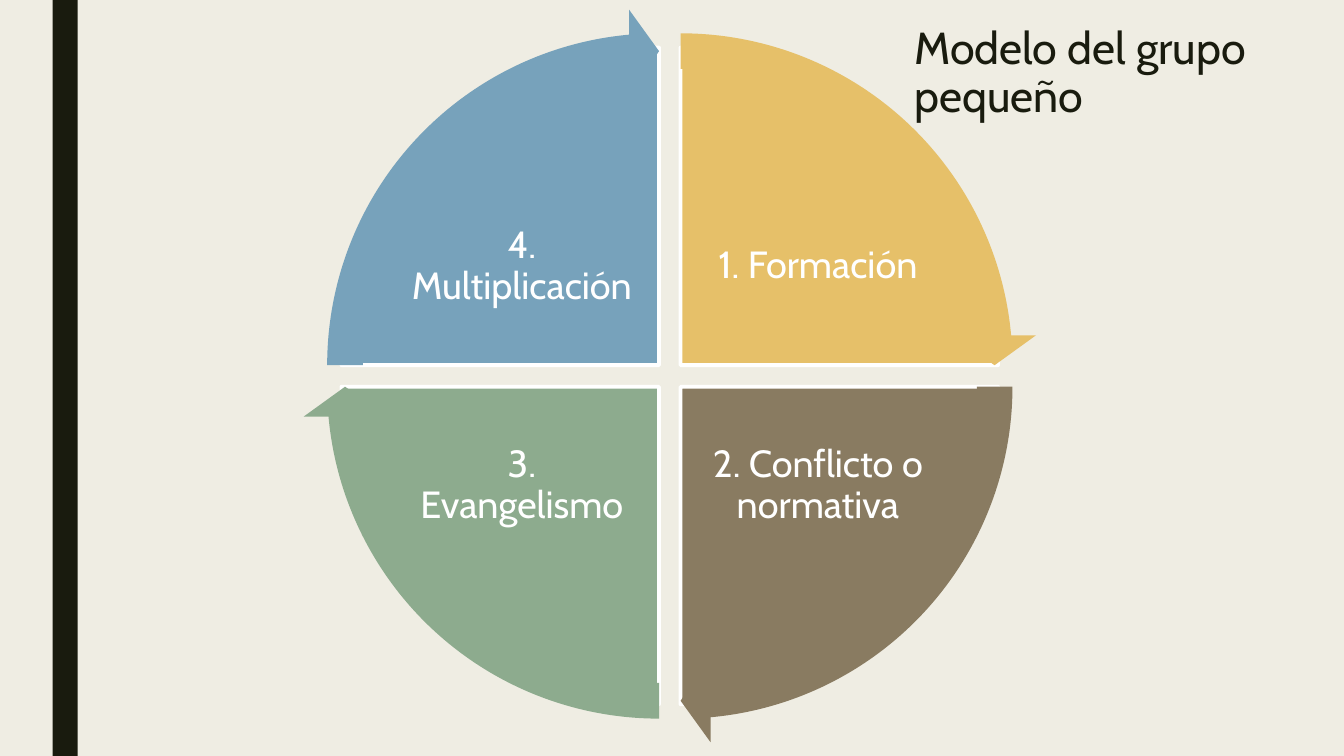
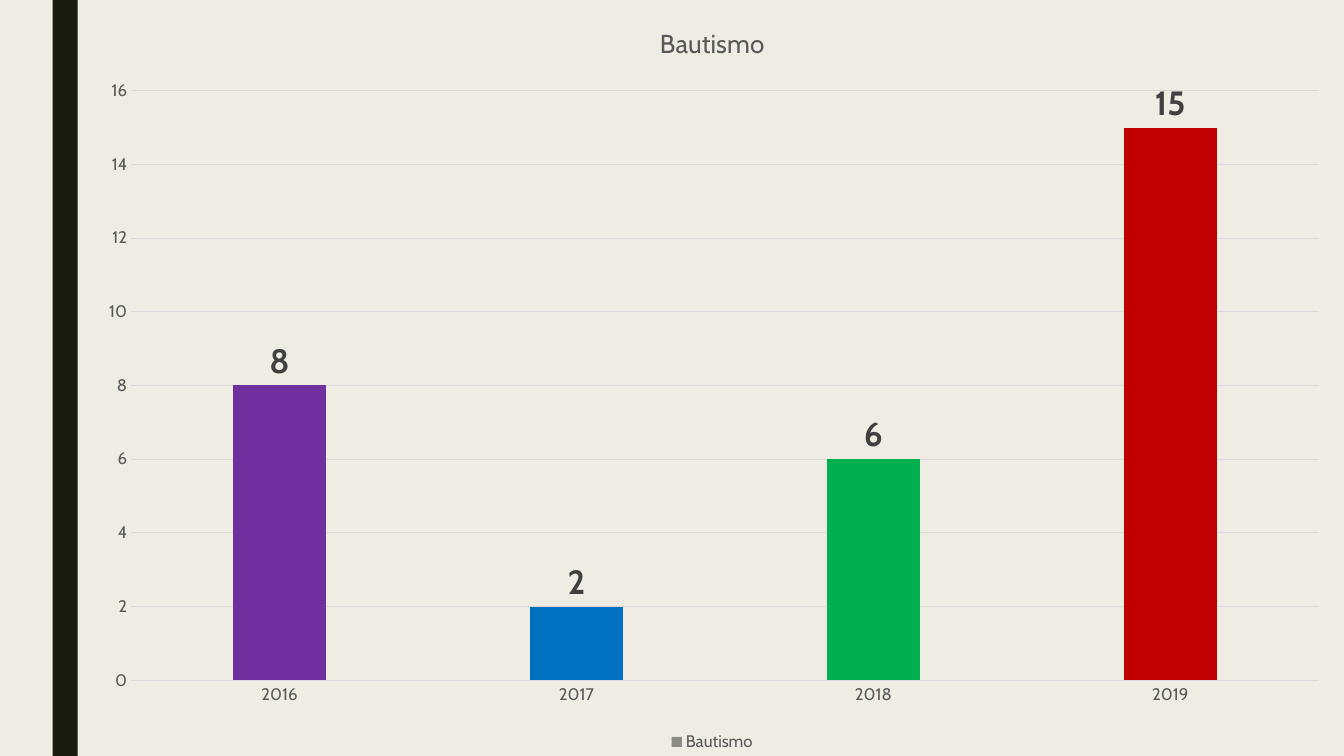
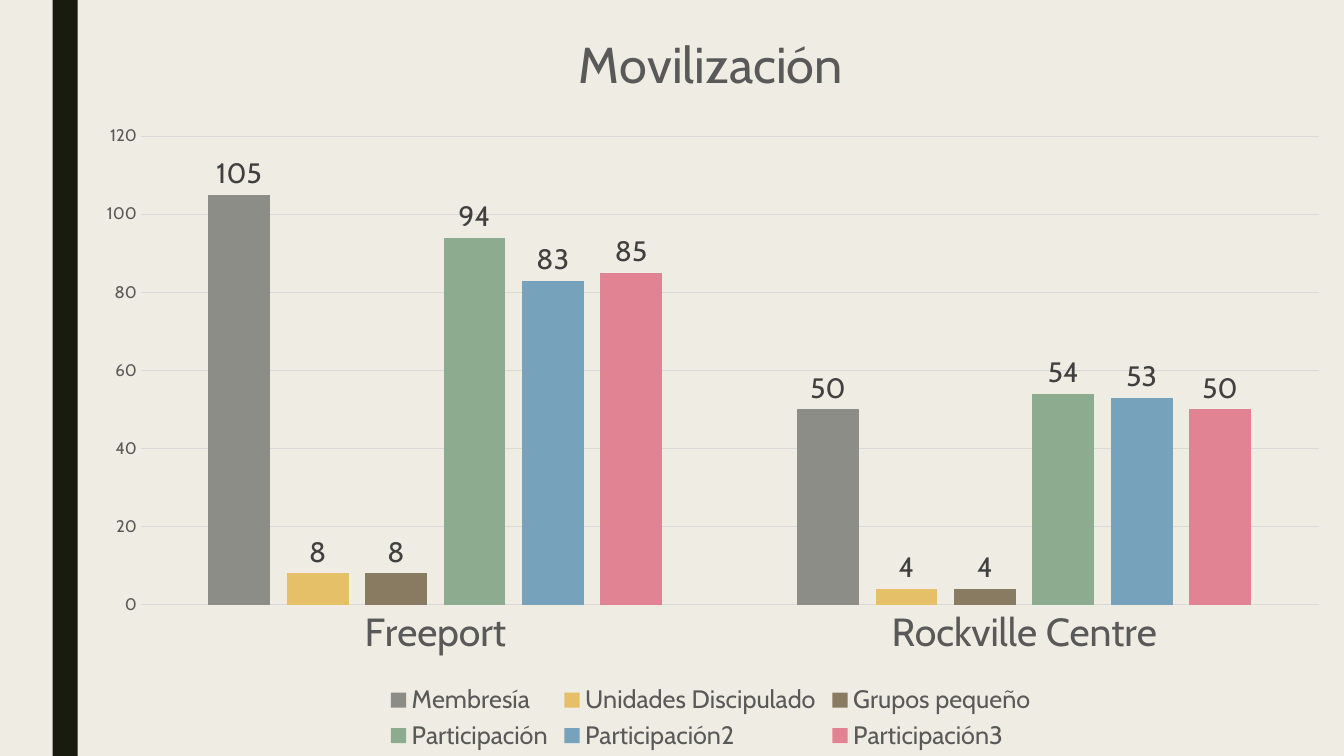
from pptx import Presentation
from pptx.chart.data import CategoryChartData
from pptx.dml.color import RGBColor
from pptx.enum.chart import XL_CHART_TYPE as ChartType, XL_LABEL_POSITION as LabelPosition
from pptx.enum.chart import XL_LEGEND_POSITION as LegendPosition, XL_TICK_MARK as TickMark
from pptx.enum.shapes import MSO_SHAPE as Shape
from pptx.enum.text import MSO_ANCHOR as Anchor, MSO_AUTO_SIZE as AutoSize, PP_ALIGN as Align
from pptx.oxml import parse_xml
from pptx.oxml.ns import nsdecls, qn
from pptx.util import Pt

FONT = "Cabin"
PAPER, INK, WHITE = "EFEDE3", "191B0E", "FFFFFF"
STONE, GOLD, BROWN, GREEN, BLUE, PINK = "8C8D86", "E6C069", "897B61", "8DAB8E", "77A2BB", "E28394"
CHART_GREY, LABEL_GREY, GRID_GREY = "595959", "404040", "D9D9D9"
TITLE_ONLY, BLANK = 5, 6


def colour(code):
    return RGBColor.from_string(code)


def style_font(font, size, color, bold=False):
    font.name = FONT
    font.size = Pt(size)
    font.bold = bold
    font.color.rgb = colour(color)


def write(frame, text, size, color, align=Align.LEFT, spacing=None):
    paragraph = frame.paragraphs[0]
    paragraph.alignment = align
    if spacing:
        paragraph.line_spacing = spacing
    run = paragraph.add_run()
    run.text = text
    style_font(run.font, size, color)


class Deck:
    def __init__(self):
        self.prs = Presentation()
        self.prs.slide_width, self.prs.slide_height = Pt(960), Pt(540)
        self.slide = None
        master = self.prs.slide_master
        fill = master.background.fill
        fill.solid()
        fill.fore_color.rgb = colour(PAPER)

    def new_slide(self, layout=BLANK):
        first = self.slide is None
        self.slide = self.prs.slides.add_slide(self.prs.slide_layouts[layout])
        if first:
            band = self.shape(Shape.RECTANGLE, 37.5, 0, 18, 540, INK)
            self.prs.slide_master.shapes.element.insert(2, band.element)

    def title(self, text, left, top, width, height):
        title = self.slide.shapes.title
        title.left, title.top, title.width, title.height = map(Pt, (left, top, width, height))
        frame = title.text_frame
        frame.word_wrap = True
        frame.auto_size = AutoSize.NONE
        frame.vertical_anchor = Anchor.TOP
        write(frame, text, 32, INK, spacing=0.89)

    def shape(self, preset, left, top, width, height, fill, line=None, adjustments=()):
        shape = self.slide.shapes.add_shape(preset, *map(Pt, (left, top, width, height)))
        shape.shadow.inherit = False
        shape.fill.solid()
        shape.fill.fore_color.rgb = colour(fill)
        if line:
            shape.line.color.rgb = colour(line)
            shape.line.width = Pt(2.75)
        else:
            shape.line.fill.background()
        for index, value in enumerate(adjustments):
            shape.adjustments[index] = value
        return shape

    def label(self, text, left, top, width, height):
        frame = self.slide.shapes.add_textbox(*map(Pt, (left, top, width, height))).text_frame
        frame.word_wrap = True
        frame.vertical_anchor = Anchor.MIDDLE
        frame.margin_left = frame.margin_right = frame.margin_top = frame.margin_bottom = Pt(2.7)
        write(frame, text, 27, WHITE, align=Align.CENTER, spacing=0.9)

    def column_chart(self, title, categories, series, box, plot_box, top_value, step,
                     title_size, category_size, legend_size, label_size,
                     bold_labels=False, point_colours=()):
        data = CategoryChartData()
        data.categories = categories
        for name, values, _ in series:
            data.add_series(name, values)
        chart = self.slide.shapes.add_chart(
            ChartType.COLUMN_CLUSTERED, *map(Pt, box), data).chart
        style_font(chart.font, 10, "000000")
        chart.has_title = True
        write(chart.chart_title.text_frame, title, title_size, CHART_GREY, align=Align.CENTER)
        chart.has_legend = True
        chart.legend.position = LegendPosition.BOTTOM
        chart.legend.include_in_layout = False
        style_font(chart.legend.font, legend_size, CHART_GREY)

        for axis, size in ((chart.category_axis, category_size), (chart.value_axis, 12)):
            axis.major_tick_mark = axis.minor_tick_mark = TickMark.NONE
            style_font(axis.tick_labels.font, size, CHART_GREY)
        scale = chart.value_axis
        scale.minimum_scale, scale.maximum_scale, scale.major_unit = 0, top_value, step
        scale.format.line.fill.background()
        for line in (chart.category_axis.format.line, scale.major_gridlines.format.line):
            line.color.rgb = colour(GRID_GREY)
            line.width = Pt(0.75)

        plot = chart.plots[0]
        plot.gap_width, plot.overlap = 219, -27
        plot.vary_by_categories = False
        for columns, (_, _, fill) in zip(plot.series, series):
            columns.format.fill.solid()
            columns.format.fill.fore_color.rgb = colour(fill)
            labels = columns.data_labels
            labels.show_value = True
            labels.position = LabelPosition.OUTSIDE_END
            style_font(labels.font, label_size, LABEL_GREY, bold=bold_labels)
            for index, point_colour in enumerate(point_colours):
                fill_format = columns.points[index].format.fill
                fill_format.solid()
                fill_format.fore_color.rgb = colour(point_colour)
        self.place_plot(chart, plot_box)

    def place_plot(self, chart, plot_box):
        area = chart.element.find(".//" + qn("c:plotArea"))
        for layout in area.findall(qn("c:layout")):
            area.remove(layout)
        modes = '<c:layoutTarget val="inner"/><c:xMode val="edge"/><c:yMode val="edge"/>'
        sizes = "".join(f'<c:{key} val="{value}"/>' for key, value in zip("xywh", plot_box))
        area.insert(0, parse_xml(
            f'<c:layout {nsdecls("c")}><c:manualLayout>{modes}{sizes}</c:manualLayout></c:layout>'))


def group_model(deck):
    deck.new_slide(TITLE_ONLY)
    deck.title("Modelo del grupo pequeño", 645.8, 15.1, 298.8, 104.4)
    stages = (
        ("1. Formación", GOLD, 1, -1),
        ("2. Conflicto o normativa", BROWN, 1, 1),
        ("3. Evangelismo", GREEN, -1, 1),
        ("4. Multiplicación", BLUE, -1, -1),
    )
    centre_x, centre_y, half_gap = 478.45, 268.55, 7.7
    pie, ring, label_width, label_height = 453.6, 509.8, 167, 124
    quarter, full_turn, head = 54, 216, 3.28
    arrows = []
    for index, (text, fill, side_x, side_y) in enumerate(stages):
        x, y = centre_x + side_x * half_gap, centre_y + side_y * half_gap
        end = quarter * index
        start = (end - quarter) % full_turn
        deck.shape(Shape.PIE, x - pie / 2, y - pie / 2, pie, pie, fill, WHITE, (start, end))
        deck.label(text, x + side_x * 98 - label_width / 2, y + side_y * 70.5 - label_height / 2,
                   label_width, label_height)
        arrows.append((x, y, fill, (0.05, head, (end - head) % full_turn, start, 0.06)))
    for x, y, fill, adjustments in arrows:
        deck.shape(Shape.CIRCULAR_ARROW, x - ring / 2, y - ring / 2, ring, ring, fill,
                   adjustments=adjustments)


def baptisms(deck):
    deck.new_slide()
    deck.column_chart(
        "Bautismo", ("2016", "2017", "2018", "2019"), (("Bautismo", (8, 2, 6, 15), STONE),),
        box=(57.6, 0, 902.4, 540), plot_box=(0.04, 0.12, 0.94, 0.78), top_value=16, step=2,
        title_size=18.6, category_size=12, legend_size=12, label_size=24, bold_labels=True,
        point_colours=("7030A0", "0070C0", "00B050", "C00000"))


def mobilisation(deck):
    deck.new_slide()
    deck.column_chart(
        "Movilización", ("Freeport", "Rockville Centre"), (
            ("Membresía", (105, 50), STONE),
            ("Unidades Discipulado", (8, 4), GOLD),
            ("Grupos pequeño", (8, 4), BROWN),
            ("Participación", (94, 54), GREEN),
            ("Participación2", (83, 53), BLUE),
            ("Participación3", (85, 50), PINK),
        ),
        box=(55.4, 0, 904.6, 540), plot_box=(0.05, 0.18, 0.93, 0.62), top_value=120, step=20,
        title_size=36, category_size=28, legend_size=18, label_size=20)


def main():
    deck = Deck()
    group_model(deck)
    baptisms(deck)
    mobilisation(deck)
    deck.prs.save("out.pptx")


if __name__ == "__main__":
    main()
